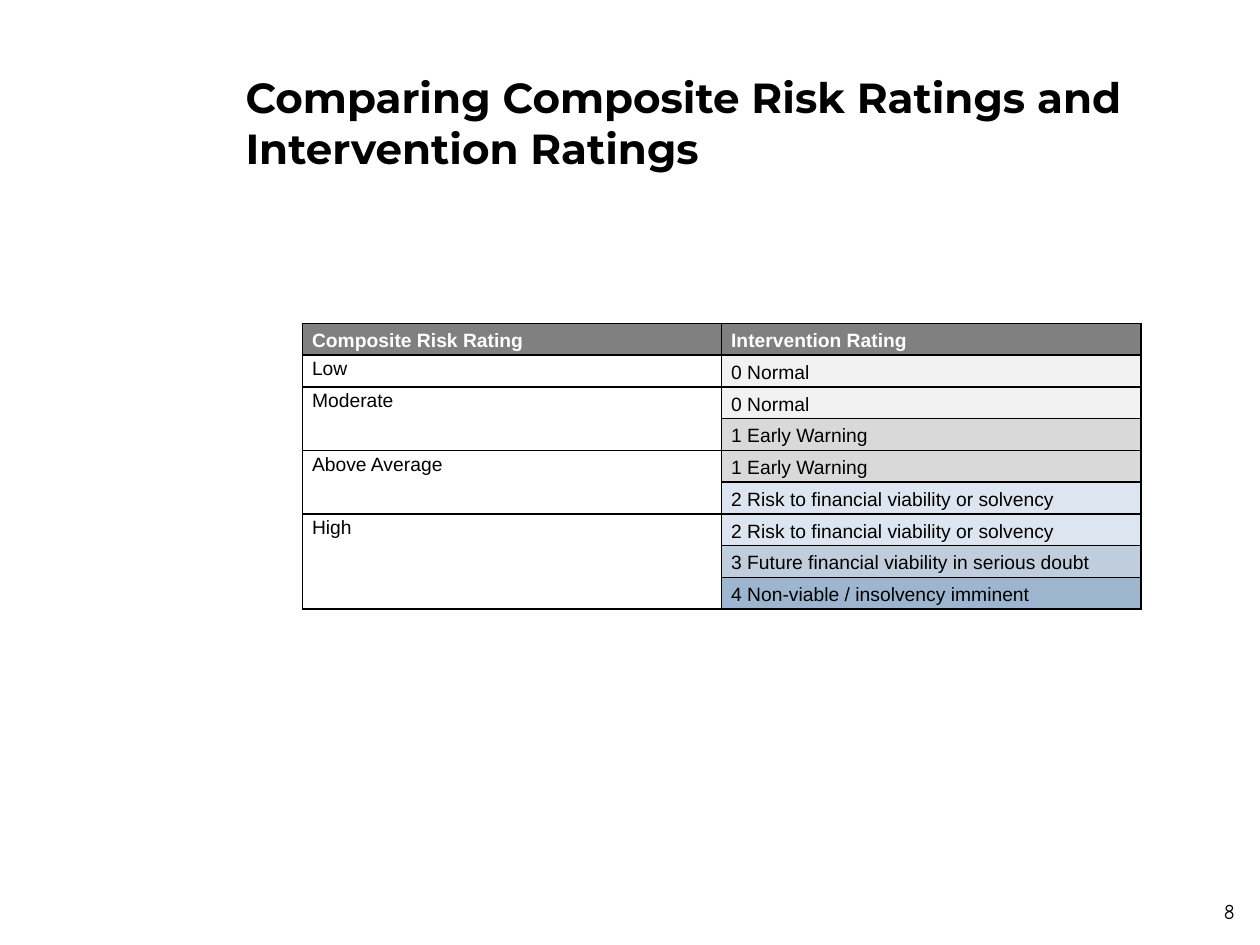
from dataclasses import dataclass
from typing import NamedTuple

from lxml.etree import SubElement
from pptx import Presentation
from pptx.dml.color import RGBColor
from pptx.enum.text import MSO_ANCHOR, PP_ALIGN
from pptx.oxml.ns import qn
from pptx.util import Cm, Pt


@dataclass(frozen=True)
class Theme:
    title_font: str = "Montserrat"
    table_font: str = "Arial"
    number_font: str = "Comic Neue"
    title_size: int = 24
    table_size: int = 11
    number_size: int = 12
    ink: str = "000000"
    header_ink: str = "FFFFFF"
    header_fill: str = "808080"
    # One fill for each intervention level, 0 to 4
    level_fills: tuple[str, ...] = ("F2F2F2", "D9D9D9", "DCE5F0", "BFCDDD", "9DB5CF")


class RiskRating(NamedTuple):
    name: str
    levels: tuple[int, ...]


class Box(NamedTuple):
    left: float
    top: float
    width: float
    height: float

    def lengths(self) -> list:
        return [Cm(value) for value in self]


THEME = Theme()
HEADERS = ("Composite Risk Rating", "Intervention Rating")
INTERVENTIONS = (
    "0 Normal",
    "1 Early Warning",
    "2 Risk to financial viability or solvency",
    "3 Future financial viability in serious doubt",
    "4 Non-viable / insolvency imminent",
)
RISK_RATINGS = (
    RiskRating("Low", (0,)),
    RiskRating("Moderate", (0, 1)),
    RiskRating("Above Average", (1, 2)),
    RiskRating("High", (2, 3, 4)),
)
ROW_HEIGHT = 0.64


def format_paragraph(paragraph, font: str, size: int, color: str, bold: bool = False) -> None:
    for run in paragraph.runs:
        run.font.name = font
        run.font.size = Pt(size)
        run.font.bold = bold
        run.font.color.rgb = RGBColor.from_string(color)


def add_text_box(slide, box: Box, text: str, font: str, size: int, bold: bool = False):
    text_frame = slide.shapes.add_textbox(*box.lengths()).text_frame
    text_frame.word_wrap = True
    text_frame.text = text
    format_paragraph(text_frame.paragraphs[0], font, size, THEME.ink, bold)
    return text_frame


def add_borders(cell) -> None:
    properties = cell._tc.get_or_add_tcPr()
    for side in ("a:lnL", "a:lnR", "a:lnT", "a:lnB"):
        line = SubElement(properties, qn(side), w=str(Pt(1)))
        fill = SubElement(line, qn("a:solidFill"))
        SubElement(fill, qn("a:srgbClr"), val=THEME.ink)


def fill_cell(cell, text: str, fill: str | None = None, header: bool = False) -> None:
    cell.text_frame.text = text
    cell.vertical_anchor = MSO_ANCHOR.MIDDLE if fill else MSO_ANCHOR.TOP
    paragraph = cell.text_frame.paragraphs[0]
    paragraph.alignment = PP_ALIGN.LEFT
    paragraph.line_spacing = 1.15
    color = THEME.header_ink if header else THEME.ink
    format_paragraph(paragraph, THEME.table_font, THEME.table_size, color, header)
    if fill:
        cell.fill.solid()
        cell.fill.fore_color.rgb = RGBColor.from_string(fill)


def add_ratings_table(slide, left: float, top: float, width: float) -> None:
    row_count = 1 + sum(len(rating.levels) for rating in RISK_RATINGS)
    box = Box(left, top, width, row_count * ROW_HEIGHT)
    table = slide.shapes.add_table(row_count, len(HEADERS), *box.lengths()).table
    table.first_row = table.horz_banding = False
    for row in table.rows:
        row.height = Cm(ROW_HEIGHT)
    for cell in table.iter_cells():
        cell.margin_left = cell.margin_right = Cm(0.19)
        cell.margin_top = cell.margin_bottom = Cm(0)
        add_borders(cell)
        cell.fill.background()

    # Header row
    for column, header in enumerate(HEADERS):
        fill_cell(table.cell(0, column), header, THEME.header_fill, header=True)

    # Each risk rating spans its intervention levels
    first_row = 1
    for rating in RISK_RATINGS:
        rating_cell = table.cell(first_row, 0)
        last_row = first_row + len(rating.levels) - 1
        if last_row > first_row:
            rating_cell.merge(table.cell(last_row, 0))
        fill_cell(rating_cell, rating.name)
        for row, level in enumerate(rating.levels, first_row):
            fill_cell(table.cell(row, 1), INTERVENTIONS[level], THEME.level_fills[level])
        first_row = last_row + 1


def add_slide_number(slide, number: int) -> None:
    text_frame = add_text_box(slide, Box(24.13, 17.86, 0.76, 0.76), str(number),
                              THEME.number_font, THEME.number_size)
    text_frame.margin_left = text_frame.margin_right = Cm(0)
    text_frame.margin_top = text_frame.margin_bottom = Cm(0)
    text_frame.vertical_anchor = MSO_ANCHOR.BOTTOM
    text_frame.paragraphs[0].alignment = PP_ALIGN.RIGHT


def main() -> None:
    presentation = Presentation()
    presentation.slide_width, presentation.slide_height = Cm(25.4), Cm(19.05)
    slide = presentation.slides.add_slide(presentation.slide_layouts[6])

    # Slide number, title and table
    add_slide_number(slide, 8)
    add_text_box(slide, Box(4.7, 1.32, 20.27, 2.21),
                 "Comparing Composite Risk Ratings and Intervention Ratings",
                 THEME.title_font, THEME.title_size, bold=True)
    add_ratings_table(slide, left=6.1, top=6.52, width=16.9)

    presentation.save("out.pptx")


if __name__ == "__main__":
    main()
